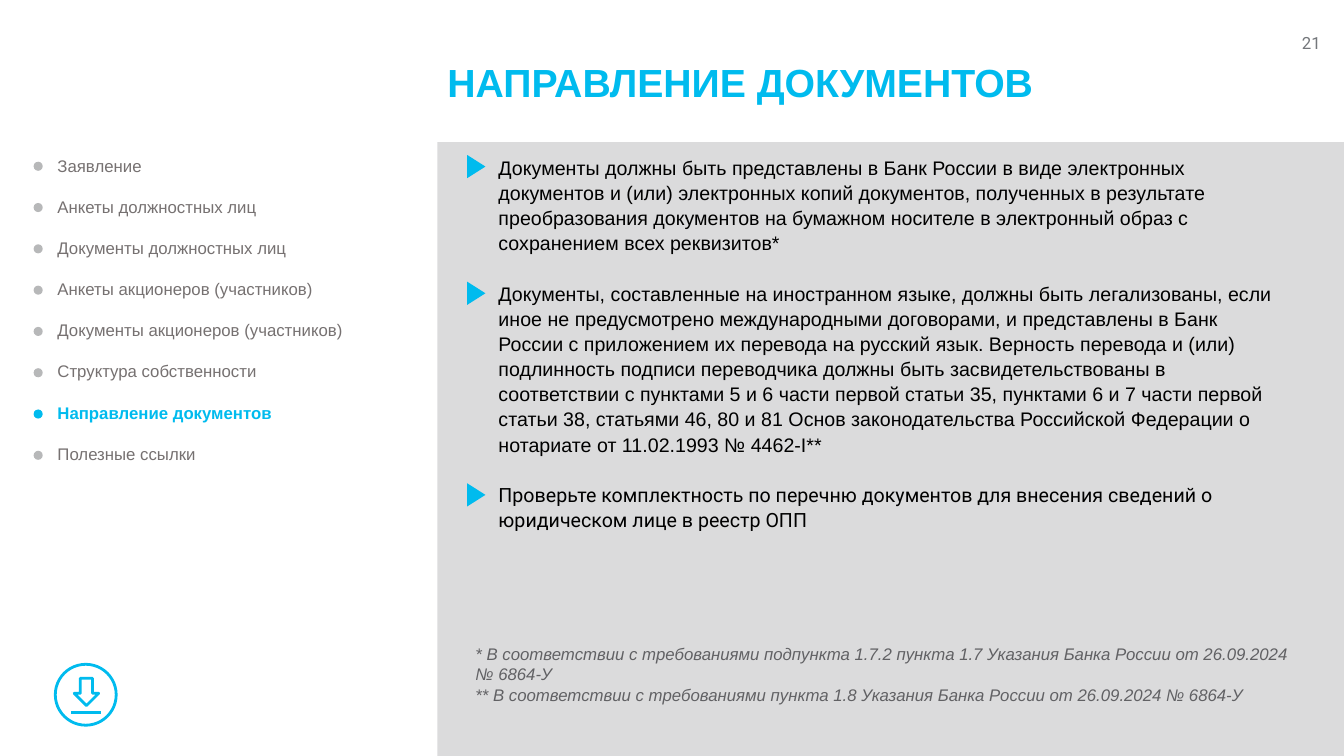
import pptx
import pptx.dml.color
import pptx.enum.shapes
import pptx.enum.text
import pptx.util
from lxml import etree

Pt = pptx.util.Pt
RGBColor = pptx.dml.color.RGBColor
MSO_SHAPE = pptx.enum.shapes.MSO_SHAPE
PP_ALIGN = pptx.enum.text.PP_ALIGN
MSO_ANCHOR = pptx.enum.text.MSO_ANCHOR

CYAN = RGBColor(0x00, 0xBB, 0xEE)
PANEL = RGBColor(0xDB, 0xDB, 0xDC)
DOT = RGBColor(0xB7, 0xB8, 0xB9)
MENU = RGBColor(0x76, 0x71, 0x71)
NOTE = RGBColor(0x61, 0x61, 0x64)
NUMBER = RGBColor(0x74, 0x77, 0x7B)
BLACK = RGBColor(0x00, 0x00, 0x00)

MENU_ITEMS = [
    "Заявление",
    "Анкеты должностных лиц",
    "Документы должностных лиц",
    "Анкеты акционеров (участников)",
    "Документы акционеров (участников)",
    "Структура собственности",
    "Направление документов",
    "Полезные ссылки",
]
CURRENT_ITEM = 6

REQUIREMENTS = [
    ("Документы должны быть представлены в Банк России в виде электронных документов "
     "и (или) электронных копий документов, полученных в результате преобразования "
     "документов на бумажном носителе в электронный образ с сохранением всех реквизитов*",
     "Arial", 112.5),
    ("Документы, составленные на иностранном языке, должны быть легализованы, если иное "
     "не предусмотрено международными договорами, и представлены в Банк России с "
     "приложением их перевода на русский язык. Верность перевода и (или) подлинность "
     "подписи переводчика должны быть засвидетельствованы в соответствии с пунктами 5 и 6 "
     "части первой статьи 35, пунктами 6 и 7 части первой статьи 38, статьями 46, 80 и 81 "
     "Основ законодательства Российской Федерации о нотариате от 11.02.1993 № 4462-I**",
     "Arial", 203),
    ("Проверьте комплектность по перечню документов для внесения сведений о юридическом "
     "лице в реестр ОПП",
     "Roboto", 347),
]

FOOTNOTES = [
    "* В соответствии с требованиями подпункта 1.7.2 пункта 1.7 Указания Банка России "
    "от 26.09.2024 № 6864-У",
    "** В соответствии с требованиями пункта 1.8 Указания Банка России от 26.09.2024 № 6864-У",
]


class SlideBuilder:
    """Draws styled elements on the current slide, with lengths in points."""

    def __init__(self, s, font="Arial", accent=CYAN, line_width=2):
        self.s = s
        self.font = font
        self.accent = accent
        self.line_width = line_width

    def text_box(self, x, y, w, h, anchor=MSO_ANCHOR.TOP):
        tf = self.s.shapes.add_textbox(Pt(x), Pt(y), Pt(w), Pt(h)).text_frame
        tf.word_wrap = True
        tf.vertical_anchor = anchor
        return tf

    def paragraph(self, tf, text, size, color, font=None, bold=False, italic=False,
                  align=PP_ALIGN.LEFT, spacing=1.0, before=0, after=0, indent=0):
        first = not tf.paragraphs[0].runs
        p = tf.paragraphs[0] if first else tf.add_paragraph()
        p.alignment = align
        p.line_spacing = spacing
        p.space_before = Pt(0 if first else before)
        p.space_after = Pt(after)
        if indent:
            pPr = p._p.get_or_add_pPr()
            pPr.set("marL", str(Pt(indent)))
            pPr.set("indent", "0")
        r = p.add_run()
        r.text = text
        r.font.name = font or self.font
        r.font.size = Pt(size)
        r.font.bold = bold
        r.font.italic = italic
        r.font.color.rgb = color

    def filled(self, kind, x, y, w, h, color, rotation=0):
        sp = self.s.shapes.add_shape(kind, Pt(x), Pt(y), Pt(w), Pt(h))
        sp.shadow.inherit = False
        sp.rotation = rotation
        sp.fill.solid()
        sp.fill.fore_color.rgb = color
        sp.line.fill.background()

    def outlined(self, kind, x, y, w, h):
        sp = self.s.shapes.add_shape(kind, Pt(x), Pt(y), Pt(w), Pt(h))
        sp.shadow.inherit = False
        sp.fill.background()
        sp.line.color.rgb = self.accent
        sp.line.width = Pt(self.line_width)

    def line(self, x1, y1, x2, y2):
        c = self.s.shapes.add_connector(
            pptx.enum.shapes.MSO_CONNECTOR.STRAIGHT, Pt(x1), Pt(y1), Pt(x2), Pt(y2))
        c.line.color.rgb = self.accent
        c.line.width = Pt(self.line_width)
        etree.SubElement(c._element.spPr, pptx.oxml.ns.qn("a:effectLst"))


def main():
    prs = pptx.Presentation()
    prs.slide_width, prs.slide_height = Pt(960), Pt(540)
    b = SlideBuilder(prs.slides.add_slide(prs.slide_layouts[6]))

    tf = b.text_box(776, 20, 174.5, 21.5)
    b.paragraph(tf, "21", 12, NUMBER, font="Roboto", align=PP_ALIGN.RIGHT)

    b.filled(MSO_SHAPE.RECTANGLE, 312.5, 101.5, 647.5, 438.5, PANEL)
    tf = b.text_box(312.5, 24, 647.5, 72.5, MSO_ANCHOR.MIDDLE)
    b.paragraph(tf, "НАПРАВЛЕНИЕ ДОКУМЕНТОВ", 28, CYAN, bold=True, spacing=0.9)

    tf = b.text_box(313, 106.5, 611.5, 339)
    for text, font, marker_y in REQUIREMENTS:
        b.paragraph(tf, text, 14, BLACK, font=font, spacing=1.07, before=18, indent=36)
        b.filled(MSO_SHAPE.ISOSCELES_TRIANGLE, 332, marker_y, 16.5, 13, CYAN, rotation=90)

    tf = b.text_box(332.5, 456.5, 599, 51)
    for text in FOOTNOTES:
        b.paragraph(tf, text, 12, NOTE, italic=True)

    b.outlined(MSO_SHAPE.OVAL, 39.5, 474.5, 43.5, 43.5)
    b.outlined(MSO_SHAPE.DOWN_ARROW, 53, 484.5, 17.5, 19.5)
    b.line(51, 509, 72, 509)

    tf = b.text_box(34, 107.5, 265.5, 229.5)
    for i, text in enumerate(MENU_ITEMS):
        current = i == CURRENT_ITEM
        b.paragraph(tf, text, 12, CYAN if current else MENU, bold=current, after=15)
        b.filled(MSO_SHAPE.OVAL, 24, 115.5 + 29.5 * i, 6.5, 6.5, CYAN if current else DOT)

    prs.save("out.pptx")


if __name__ == "__main__":
    main()
